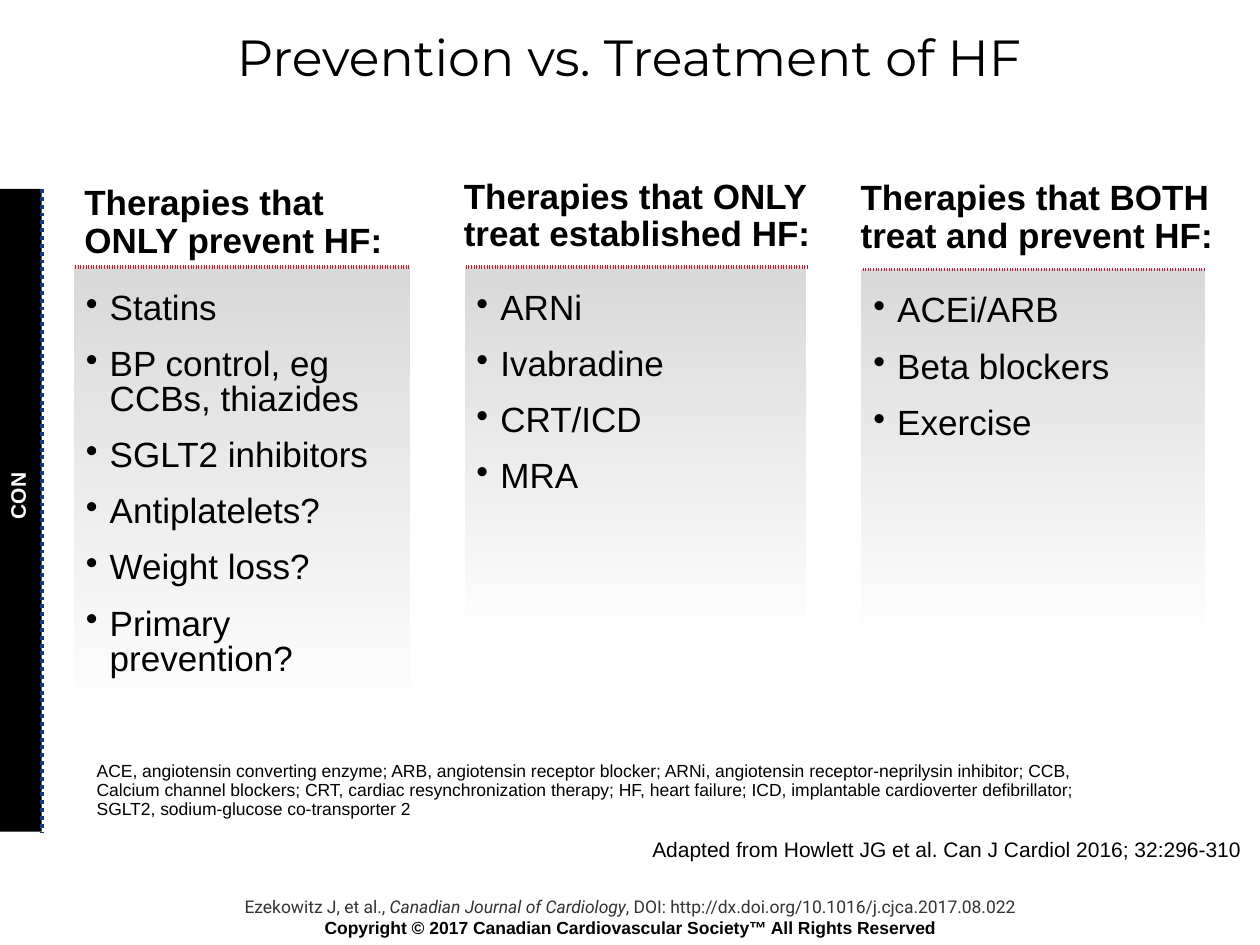
from pptx import Presentation, oxml, util as u
from pptx.dml import color as col
from pptx.enum import dml, shapes, text
from pptx.oxml import ns

Pt = u.Pt
HEX = {"ink": "000000", "paper": "FFFFFF", "cite": "333333",
       "navy": "163784", "red": "C71B32", "grey": "D9D9D9"}
LEFT, MID, RIGHT = (text.PP_ALIGN.LEFT, text.PP_ALIGN.CENTER,
                    text.PP_ALIGN.RIGHT)
GROW = text.MSO_AUTO_SIZE.SHAPE_TO_FIT_TEXT
HEADS = [("Therapies that ONLY treat established HF:", 265, 102.2, 205.2),
         ("Therapies that BOTH treat and prevent HF:", 491.8, 103, 218.9)]
LISTS = [
    (41.8, 152.6, 193, ["Statins", "BP control, eg CCBs, thiazides",
                        "SGLT2 inhibitors", "Antiplatelets?",
                        "Weight loss?", "Primary prevention?"]),
    (265, 152.6, 195.8, ["ARNi", "Ivabradine", "CRT/ICD", "MRA"]),
    (491.8, 154.1, 197.3, ["ACEi/ARB", "Beta blockers", "Exercise"]),
]
NOTE = ("ACE, angiotensin converting enzyme; ARB, angiotensin receptor "
        "blocker; ARNi, angiotensin receptor-neprilysin inhibitor; CCB, "
        "Calcium channel blockers; CRT, cardiac resynchronization therapy; "
        "HF, heart failure; ICD, implantable cardioverter defibrillator; "
        "SGLT2, sodium-glucose co-transporter 2")


def rgb(name):
    return col.RGBColor.from_string(HEX[name])


def node(tag, **attrs):
    part = oxml.parse_xml(f"<a:{tag} {ns.nsdecls('a')}/>")
    for key, val in attrs.items():
        part.set(key, str(val))
    return part


def write(para, words, size=20, face="Arial", ink="ink", bold=False,
          slant=False, align=LEFT, lead=None, after=0):
    para.alignment = align
    para.space_before = Pt(0)
    para.space_after = Pt(after)
    if lead:
        para.line_spacing = lead
    for n, line in enumerate(words.split("\n")):
        if n:
            para.add_line_break()
        run = para.add_run()
        run.text = line
        font = run.font
        font.size, font.name = Pt(size), face
        font.bold, font.italic = bold, slant
        font.color.rgb = rgb(ink)


def place(shape, x, y, w, h):
    shape.left, shape.top, shape.width, shape.height = map(Pt, (x, y, w, h))


def frame(shape, wrap=True, fit=text.MSO_AUTO_SIZE.NONE,
          anchor=text.MSO_ANCHOR.TOP, inset=None):
    body = shape.text_frame
    body.word_wrap, body.auto_size = wrap, fit
    body.vertical_anchor = anchor
    if inset is not None:
        body.margin_left = body.margin_right = Pt(inset)
        body.margin_top = body.margin_bottom = Pt(inset)
    return body.paragraphs[0]


def label(slide, words, box, wrap=True, fit=text.MSO_AUTO_SIZE.NONE,
          anchor=text.MSO_ANCHOR.TOP, inset=None, turn=0, **style):
    shape = slide.shapes.add_textbox(*map(Pt, box))
    shape.rotation = turn
    para = frame(shape, wrap, fit, anchor, inset)
    write(para, words, **style)
    return shape


def bullet(para, words):
    props = para._p.get_or_add_pPr()
    props.set("marL", str(Pt(13.7)))
    props.set("indent", str(-Pt(13.7)))
    props.append(node("buChar", char="•"))
    write(para, words, lead=0.9, after=12)


def shade(cell):
    fill = cell.fill
    fill.gradient()
    fill.gradient_angle = 90
    for stop, spot in zip(fill.gradient_stops, (0, 1)):
        stop.position = spot
        stop.color.rgb = rgb("grey")
    props = cell._tc.get_or_add_tcPr()
    props.find(".//" + ns.qn("a:srgbClr")).append(node("alpha", val=0))
    edge, solid = node("lnT", w=Pt(2.25)), node("solidFill")
    solid.append(node("srgbClr", val=HEX["red"]))
    edge.append(solid)
    edge.append(node("prstDash", val="sysDot"))
    props.insert(0, edge)


def panel(slide, x, y, w, items):
    table = slide.shapes.add_table(1, 1, *map(Pt, (x, y, w, 208.1))).table
    table.first_row = table.horz_banding = False
    cell = table.cell(0, 0)
    cell.margin_left = cell.margin_right = Pt(7.2)
    cell.margin_top, cell.margin_bottom = Pt(14.4), Pt(3.6)
    shade(cell)
    body = cell.text_frame
    for n, item in enumerate(items):
        bullet(body.add_paragraph() if n else body.paragraphs[0], item)


def banner(slide):
    bar = slide.shapes.add_shape(shapes.MSO_SHAPE.RECTANGLE,
                                 *map(Pt, (0, 108, 23.8, 367.2)))
    bar.shadow.inherit = False
    bar.fill.solid()
    bar.fill.fore_color.rgb = rgb("ink")
    bar.line.fill.background()
    rule = slide.shapes.add_connector(shapes.MSO_CONNECTOR.STRAIGHT,
                                      *map(Pt, (23.8, 108, 23.8, 475.9)))
    rule.line.color.rgb = rgb("navy")
    rule.line.width = Pt(2.25)
    rule.line.dash_style = dml.MSO_LINE.ROUND_DOT
    rule._element.spPr.append(node("effectLst"))
    label(slide, "CON", (-10.8, 272.2, 41.8, 21.6), wrap=False, fit=GROW,
          turn=270, size=12, ink="paper", bold=True)


def footer(slide):
    cite = dict(size=10, face="Roboto", ink="cite", align=MID)
    shape = label(slide, "Ezekowitz J, et al., ", (82.8, 508.3, 554.4, 31.7),
                  fit=GROW, **cite)
    body = shape.text_frame
    write(body.paragraphs[0], "Canadian Journal of Cardiology",
          slant=True, **cite)
    write(body.paragraphs[0],
          ", DOI: http://dx.doi.org/10.1016/j.cjca.2017.08.022", **cite)
    write(body.add_paragraph(),
          "Copyright © 2017 Canadian Cardiovascular Society™ "
          "All Rights Reserved", size=10, bold=True, align=MID)


def main():
    deck = Presentation()
    deck.slide_width, deck.slide_height = Pt(720), Pt(540)
    slide = deck.slides.add_slide(deck.slide_layouts[1])
    title, lead = slide.placeholders
    place(title, 21.6, 12.2, 676.1, 39.6)
    write(frame(title, anchor=text.MSO_ANCHOR.MIDDLE),
          "Prevention vs. Treatment of HF",
          size=29, face="Montserrat", align=MID)
    place(lead, 41, 102.2, 209.5, 50.4)
    para = frame(lead)
    props = para._p.get_or_add_pPr()
    props.set("marL", "0")
    props.set("indent", "0")
    props.append(node("buNone"))
    write(para, "Therapies that\nONLY prevent HF:", bold=True, lead=0.9)
    banner(slide)
    for words, x, y, w in HEADS:
        label(slide, words, (x, y, w, 50.4), inset=0, bold=True, lead=0.9)
    for x, y, w, items in LISTS:
        panel(slide, x, y, w, items)
    label(slide, NOTE, (48.2, 437.8, 576, 33.8),
          anchor=text.MSO_ANCHOR.BOTTOM, size=10, lead=0.9)
    label(slide, "Adapted from Howlett JG et al. Can J Cardiol 2016; "
          "32:296-310 ", (347.8, 474.5, 372.2, 21.6), fit=GROW,
          size=12, align=RIGHT)
    footer(slide)
    deck.save("out.pptx")


if __name__ == "__main__":
    main()
